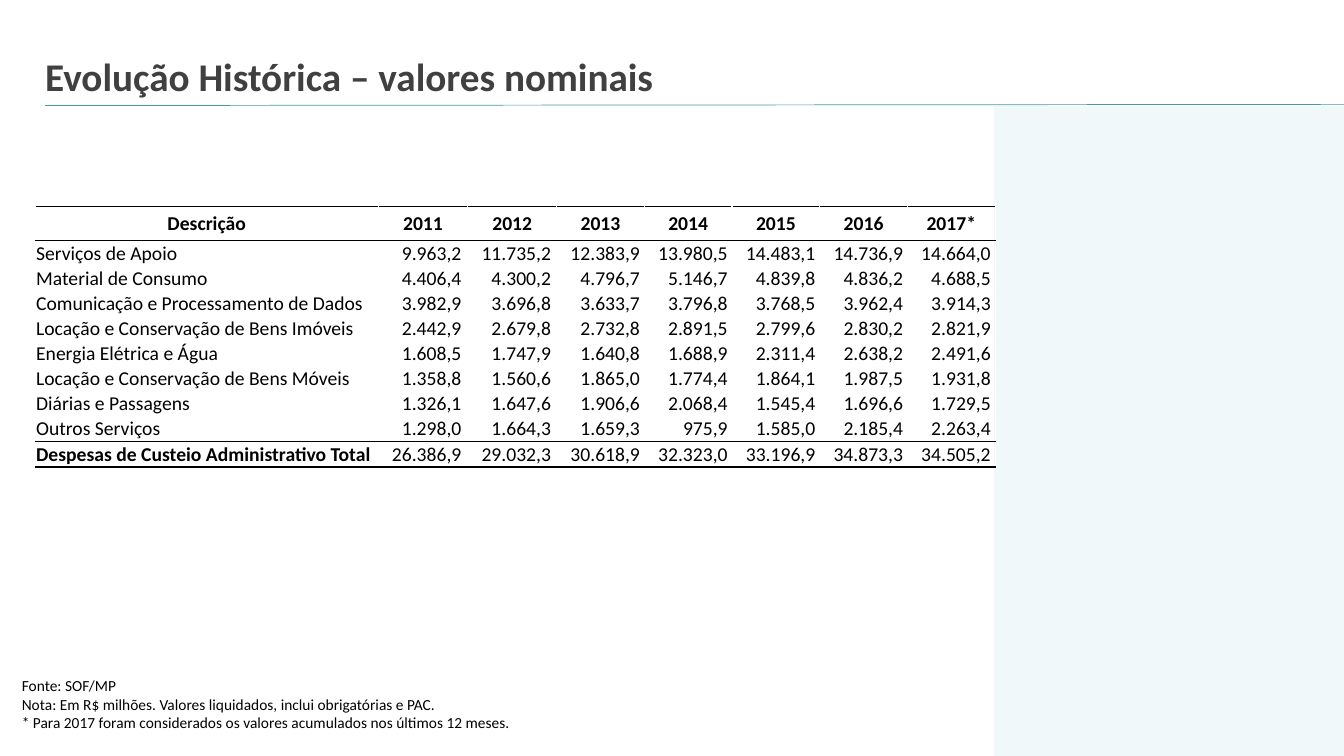
from lxml import etree
from pptx import Presentation
from pptx.dml.color import RGBColor
from pptx.enum.shapes import MSO_CONNECTOR, MSO_SHAPE
from pptx.enum.text import MSO_ANCHOR, PP_ALIGN
from pptx.oxml.ns import qn
from pptx.util import Cm, Pt

LEFT, CENTER, RIGHT = PP_ALIGN.LEFT, PP_ALIGN.CENTER, PP_ALIGN.RIGHT
MIDDLE, BOTTOM = MSO_ANCHOR.MIDDLE, MSO_ANCHOR.BOTTOM
COLORS = {"panel": "F1F8F9", "rule": "4A999F", "title": "404040", "text": "000000"}
FONT = "Calibri"


def style_paragraph(paragraph, size, color, bold=False, align=LEFT):
    paragraph.alignment = align
    paragraph.font.name = FONT
    paragraph.font.size = Pt(size)
    paragraph.font.bold = bold
    paragraph.font.color.rgb = RGBColor.from_string(COLORS[color])


def add_border(cell, side, width):
    properties = cell._tc.get_or_add_tcPr()
    line = etree.Element(qn(f"a:{side}"), w=str(Pt(width)))
    fill = etree.SubElement(line, qn("a:solidFill"))
    etree.SubElement(fill, qn("a:srgbClr"), val=COLORS["text"])
    # Borders come before the cell fill, top before bottom
    properties.insert(len(properties) - 1, line)


presentation = Presentation()
presentation.slide_width = Cm(33.87)
presentation.slide_height = Cm(19.05)
slide = presentation.slides.add_slide(presentation.slide_layouts[6])

# Side panel
panel = slide.shapes.add_shape(
    MSO_SHAPE.RECTANGLE, Cm(25.06), Cm(2.69), Cm(8.81), Cm(16.36))
panel.shadow.inherit = False
panel.fill.solid()
panel.fill.fore_color.rgb = RGBColor.from_string(COLORS["panel"])
panel.line.color.rgb = RGBColor.from_string(COLORS["panel"])
panel.line.width = Pt(1)

# Rule under the title
rule = slide.shapes.add_connector(
    MSO_CONNECTOR.STRAIGHT, Cm(1.14), Cm(2.66), Cm(33.87), Cm(2.63))
rule.line.color.rgb = RGBColor.from_string(COLORS["rule"])
rule.line.width = Pt(0.5)
etree.SubElement(rule._element.spPr, qn("a:effectLst"))

# Title
title = slide.shapes.add_textbox(Cm(0.89), Cm(0.23), Cm(24.3), Cm(2.41))
title.text_frame.word_wrap = True
title.text_frame.vertical_anchor = BOTTOM
paragraph = title.text_frame.paragraphs[0]
paragraph.text = "Evolução Histórica – valores nominais"
paragraph.line_spacing = 0.9
style_paragraph(paragraph, 28, "title", bold=True)

# Source and notes
notes = slide.shapes.add_textbox(Cm(0.3), Cm(16.92), Cm(20.98), Cm(2.13))
notes.text_frame.word_wrap = True
notes.text_frame.text = "\n".join([
    "Fonte: SOF/MP",
    "Nota: Em R$ milhões. Valores liquidados, inclui obrigatórias e PAC.",
    "* Para 2017 foram considerados os valores acumulados nos últimos 12 meses.",
])
for paragraph in notes.text_frame.paragraphs:
    style_paragraph(paragraph, 11, "text")

# Expense table
ROWS = [
    ["Descrição", "2011", "2012", "2013", "2014", "2015", "2016", "2017*"],
    ["Serviços de Apoio", "9.963,2", "11.735,2", "12.383,9", "13.980,5",
     "14.483,1", "14.736,9", "14.664,0"],
    ["Material de Consumo", "4.406,4", "4.300,2", "4.796,7", "5.146,7",
     "4.839,8", "4.836,2", "4.688,5"],
    ["Comunicação e Processamento de Dados", "3.982,9", "3.696,8", "3.633,7",
     "3.796,8", "3.768,5", "3.962,4", "3.914,3"],
    ["Locação e Conservação de Bens Imóveis", "2.442,9", "2.679,8", "2.732,8",
     "2.891,5", "2.799,6", "2.830,2", "2.821,9"],
    ["Energia Elétrica e Água", "1.608,5", "1.747,9", "1.640,8", "1.688,9",
     "2.311,4", "2.638,2", "2.491,6"],
    ["Locação e Conservação de Bens Móveis", "1.358,8", "1.560,6", "1.865,0",
     "1.774,4", "1.864,1", "1.987,5", "1.931,8"],
    ["Diárias e Passagens", "1.326,1", "1.647,6", "1.906,6", "2.068,4",
     "1.545,4", "1.696,6", "1.729,5"],
    ["Outros Serviços", "1.298,0", "1.664,3", "1.659,3", "975,9",
     "1.585,0", "2.185,4", "2.263,4"],
    ["Despesas de Custeio Administrativo Total", "26.386,9", "29.032,3",
     "30.618,9", "32.323,0", "33.196,9", "34.873,3", "34.505,2"],
]
COLUMN_WIDTHS = [8.64, 2.26, 2.24] + [2.21] * 5
ROW_HEIGHTS = [0.86] + [0.63] * 8 + [0.66]
NUMBER_EDGE = 2.1  # right edge of the figures within each column
LAST = len(ROWS) - 1
BORDERS = {
    0: [("lnT", 0.5), ("lnB", 1)],
    1: [("lnT", 1)],
    LAST - 1: [("lnB", 0.5)],
    LAST: [("lnT", 0.5), ("lnB", 1)],
}

table = slide.shapes.add_table(
    len(ROWS), len(COLUMN_WIDTHS), Cm(0.89), Cm(5.21),
    Cm(sum(COLUMN_WIDTHS)), Cm(sum(ROW_HEIGHTS))).table
table.first_row = False
table.horz_banding = False
for column, width in zip(table.columns, COLUMN_WIDTHS):
    column.width = Cm(width)

for row_index, (values, height) in enumerate(zip(ROWS, ROW_HEIGHTS)):
    table.rows[row_index].height = Cm(height)
    for column_index, value in enumerate(values):
        cell = table.cell(row_index, column_index)
        is_header = row_index == 0
        is_label = column_index == 0
        cell.margin_left = cell.margin_right = cell.margin_top = Cm(0.02)
        cell.margin_bottom = Cm(0)
        cell.vertical_anchor = BOTTOM if row_index == LAST else MIDDLE
        if is_header:
            align = CENTER
        elif is_label:
            align = LEFT
        else:
            align = RIGHT
            cell.margin_right = Cm(COLUMN_WIDTHS[column_index] - NUMBER_EDGE)
        cell.fill.background()
        for side, width in BORDERS.get(row_index, []):
            add_border(cell, side, width)
        paragraph = cell.text_frame.paragraphs[0]
        paragraph.text = value
        bold = is_header or (is_label and row_index == LAST)
        style_paragraph(paragraph, 14, "text", bold, align)

presentation.save("out.pptx")
